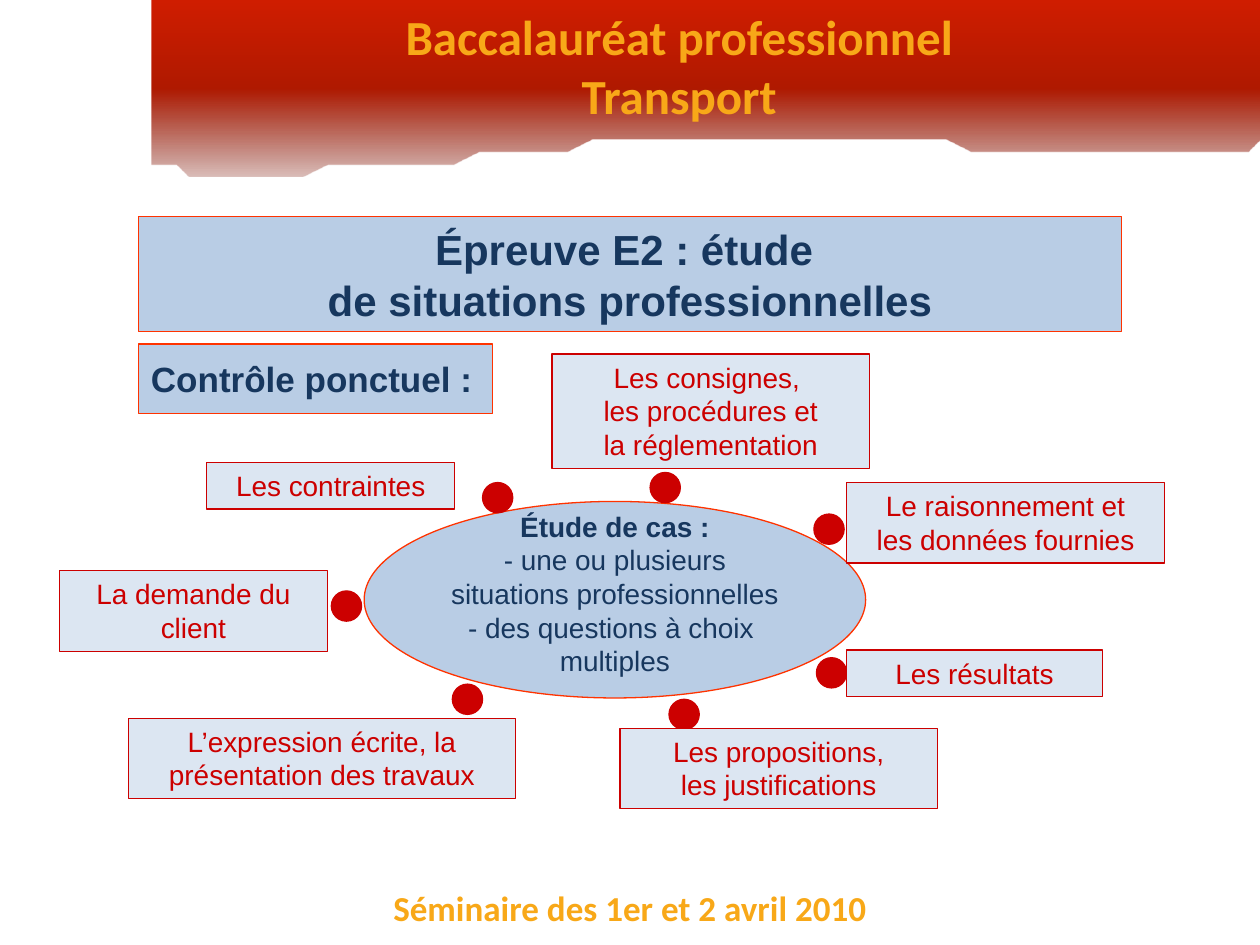
from lxml.etree import SubElement
from pptx import Presentation
from pptx.dml.color import RGBColor
from pptx.enum.shapes import MSO_SHAPE
from pptx.enum.text import MSO_ANCHOR, PP_ALIGN
from pptx.oxml.ns import qn
from pptx.util import Inches, Pt

COLUMNS, ROWS = 100, 75
SLIDE_WIDTH, SLIDE_HEIGHT = Inches(10), Inches(7.5)

GOLD = RGBColor(0xF8, 0xA8, 0x18)
NAVY = RGBColor(0x17, 0x37, 0x5E)
RED = RGBColor(0xCC, 0x00, 0x00)
ORANGE = RGBColor(0xFF, 0x33, 0x00)
BLUE = RGBColor(0xB9, 0xCD, 0xE5)
PALE_BLUE = RGBColor(0xDC, 0xE6, 0xF2)
BANNER_STOPS = [  # position %, colour, opacity %
    (0, RGBColor(0x7B, 0x11, 0x00), 27),
    (50, RGBColor(0xAF, 0x19, 0x00), 100),
    (100, RGBColor(0xD0, 0x1D, 0x00), 100),
]

DOT_SIZE = 2.4
# text, label column, row, width, number of lines, dot column, row
CASE_SKILLS = [
    ("La demande du client", 0, 17.2, 21.3, 2, 21.6, 18.8),
    ("Les contraintes", 11.7, 8.6, 19.7, 1, 33.6, 10.2),
    ("Les consignes, \nles procédures et\nla réglementation", 39.1, 0, 25.2, 3, 46.9, 9.4),
    ("Le raisonnement et\nles données fournies", 62.5, 10.2, 25.2, 2, 59.9, 12.7),
    ("Les résultats", 62.5, 23.5, 20.3, 1, 60.1, 24.1),
    ("Les propositions,\nles justifications", 44.5, 29.7, 25.2, 2, 48.4, 27.4),
    ("L’expression écrite, la présentation des travaux", 5.5, 28.9, 30.7, 2, 31.2, 26.2),
]


def place(left, top, width, height):
    """Turn grid columns and rows into slide lengths."""
    across, down = SLIDE_WIDTH / COLUMNS, SLIDE_HEIGHT / ROWS
    return round(left * across), round(top * down), round(width * across), round(height * down)


def write(shape, text, size, color, font="Arial", bold=False, bold_first=False,
          align=PP_ALIGN.CENTER, anchor=MSO_ANCHOR.TOP, wrap=True):
    frame = shape.text_frame
    frame.text = text
    frame.word_wrap = wrap
    frame.vertical_anchor = anchor
    for index, paragraph in enumerate(frame.paragraphs):
        paragraph.alignment = align
        for run in paragraph.runs:
            run.font.name = font
            run.font.size = Pt(size)
            run.font.bold = bold or (bold_first and index == 0)
            run.font.color.rgb = color


def add_box(slide, box, fill, line, kind=MSO_SHAPE.RECTANGLE):
    shape = slide.shapes.add_shape(kind, *place(*box))
    shape.shadow.inherit = False
    shape.fill.solid()
    shape.fill.fore_color.rgb = fill
    shape.line.color.rgb = line
    shape.line.width = Pt(0.75)
    return shape


def bezier(start, control1, control2, end, steps=24):
    for step in range(1, steps + 1):
        t = step / steps
        weights = ((1 - t) ** 3, 3 * t * (1 - t) ** 2, 3 * t ** 2 * (1 - t), t ** 3)
        yield tuple(sum(w * p[axis] for w, p in zip(weights, (start, control1, control2, end)))
                    for axis in (0, 1))


def fill_banner(banner):
    banner.fill.gradient()
    banner.fill.gradient_angle = 90
    stops = banner.fill._fill._gradFill.find(qn("a:gsLst"))
    for stop in list(stops):
        stops.remove(stop)
    for position, color, opacity in BANNER_STOPS:
        stop = SubElement(stops, qn("a:gs"), pos=str(position * 1000))
        rgb = SubElement(stop, qn("a:srgbClr"), val=str(color))
        SubElement(rgb, qn("a:alpha"), val=str(opacity * 1000))


def add_banner(slide, box):
    """Wavy red banner behind the slide title."""
    left, top, width, height = box
    right = left + width
    crest = (left + 0.51 * width, top + 0.71 * height)
    right_end = (right, top + 0.74 * height)
    left_end = (left, top + 0.86 * height)
    outline = [
        (right, top), right_end,
        *bezier(right_end, (right - 0.08 * width, top + 0.88 * height),
                (right - 0.325 * width, top + 0.69 * height), crest),
        *bezier(crest, (left + 0.34 * width, top + 0.73 * height),
                (left + 0.085 * width, top + height), left_end),
    ]
    builder = slide.shapes.build_freeform(left, top, scale=SLIDE_WIDTH / COLUMNS)
    builder.add_line_segments(outline, close=True)
    banner = builder.convert_to_shape()
    banner.shadow.inherit = False
    banner.line.fill.background()
    fill_banner(banner)

    title = slide.shapes.title
    title.left, title.top, title.width, title.height = place(28.9, top, 50, 10.4)
    write(title, "Baccalauréat professionnel\nTransport", 28, GOLD, font="Calibri", bold=True)
    banner._element.addnext(title._element)


def add_headings(slide, box):
    left, top, width, height = box
    exam = add_box(slide, (left, top, width, 9.1), BLUE, ORANGE)
    write(exam, "Épreuve E2 : étude \nde situations professionnelles", 24, NAVY,
          bold=True, anchor=MSO_ANCHOR.MIDDLE, wrap=False)
    control = add_box(slide, (left, top + height - 5.5, 0.36 * width, 5.5), BLUE, ORANGE)
    write(control, "Contrôle ponctuel :", 20, NAVY, bold=True,
          align=PP_ALIGN.LEFT, anchor=MSO_ANCHOR.MIDDLE, wrap=False)


def add_case_study(slide, box):
    """Central ellipse with its ring of dots and labels."""
    left, top, _, _ = box
    case = add_box(slide, (left + 24.2, top + 11.7, 39.8, 15.6), BLUE, ORANGE, MSO_SHAPE.OVAL)
    write(case, "Étude de cas :\n- une ou plusieurs\nsituations professionnelles\n"
          "- des questions à choix \vmultiples", 16, NAVY, bold_first=True,
          anchor=MSO_ANCHOR.MIDDLE, wrap=False)
    case.text_frame.margin_bottom = Inches(0.15)
    for text, column, row, width, lines, dot_column, dot_row in CASE_SKILLS:
        add_box(slide, (left + dot_column, top + dot_row, DOT_SIZE, DOT_SIZE),
                RED, RED, MSO_SHAPE.OVAL)
        label = add_box(slide, (left + column, top + row, width, 1 + 2.7 * lines),
                        PALE_BLUE, RED)
        write(label, text, 16, RED)


def add_seminar_date(slide, box):
    date = slide.shapes.add_textbox(*place(*box))
    write(date, "Séminaire des 1er et 2 avril 2010", 20, GOLD, font="Calibri", bold=True)


def main():
    presentation = Presentation()
    presentation.slide_width, presentation.slide_height = SLIDE_WIDTH, SLIDE_HEIGHT
    slide = presentation.slides.add_slide(presentation.slide_layouts[5])
    add_banner(slide, (12.5, 0, 87.5, 15.3))
    add_case_study(slide, (4.7, 28.1, 87.7, 36.1))
    add_headings(slide, (11, 17.2, 78, 15.6))
    add_seminar_date(slide, (25, 69.9, 50, 4.4))
    presentation.save("out.pptx")


if __name__ == "__main__":
    main()
